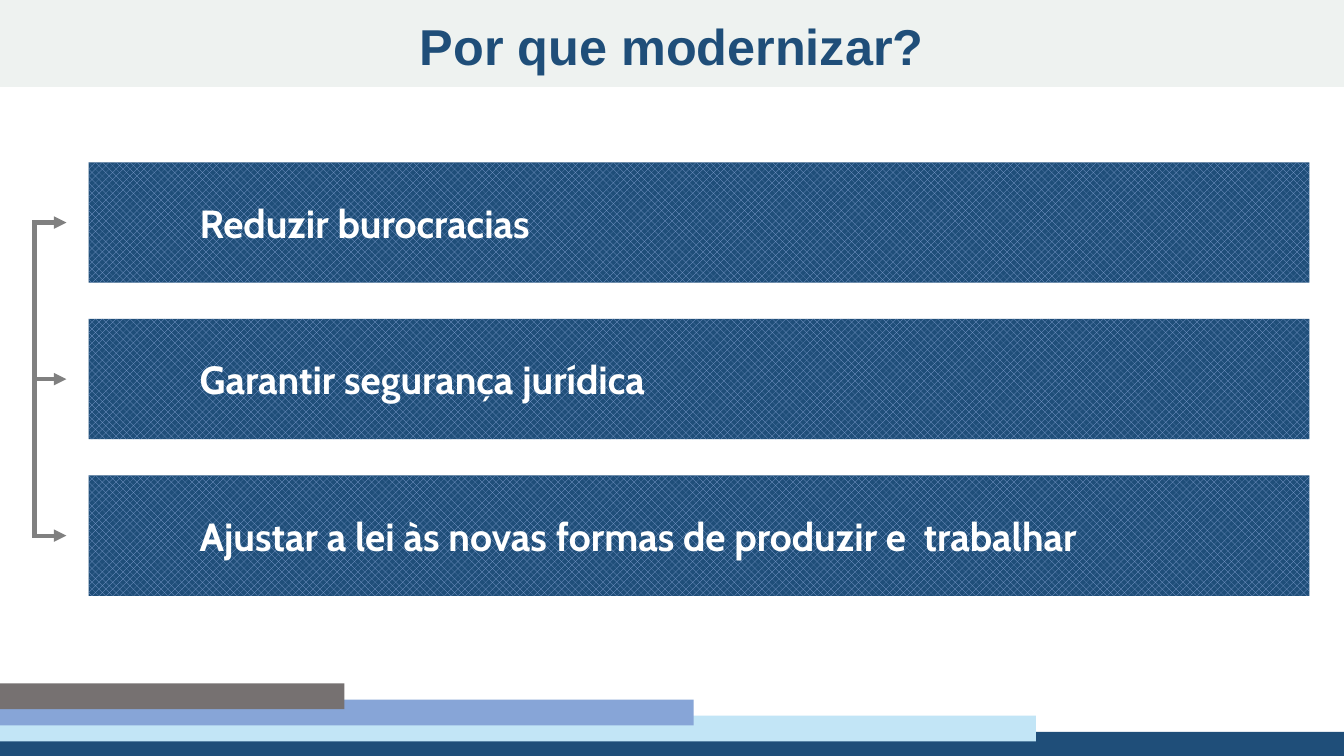
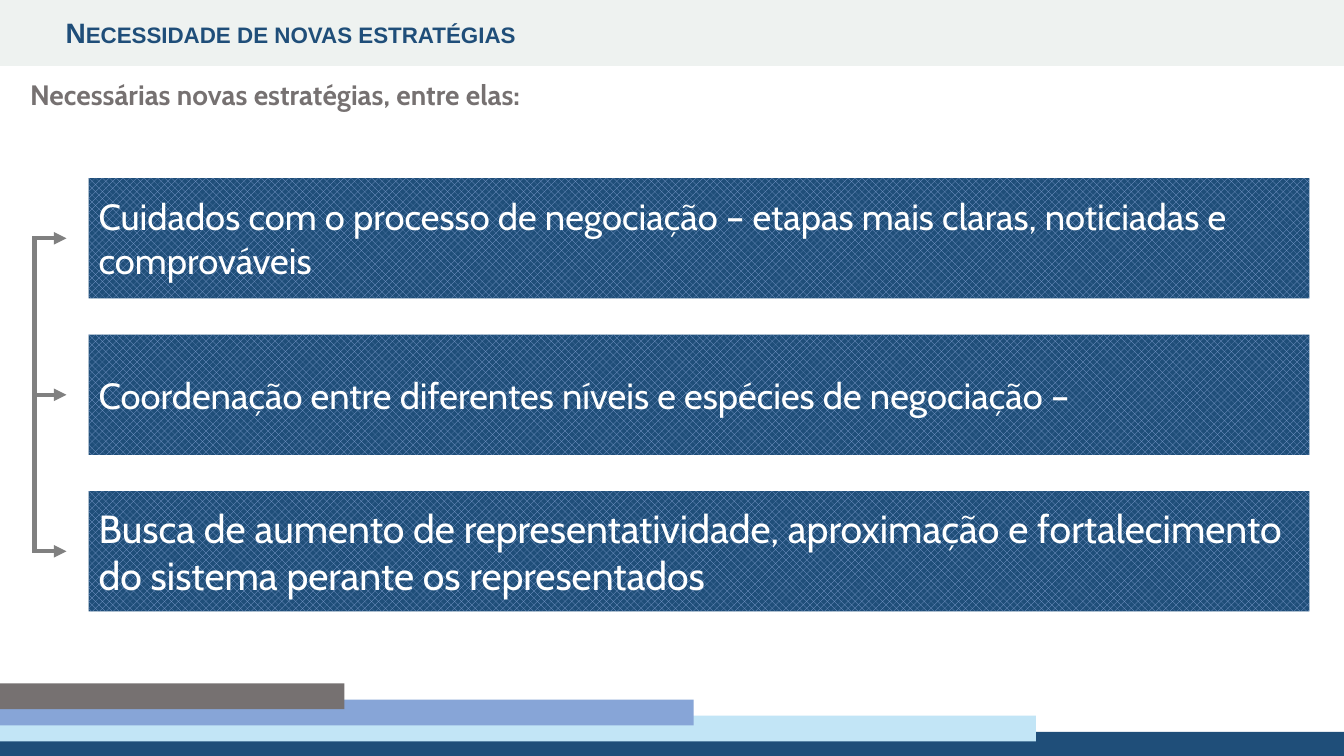
from dataclasses import dataclass

from lxml import etree
from pptx import Presentation
from pptx.dml.color import RGBColor
from pptx.enum.dml import MSO_PATTERN
from pptx.enum.shapes import MSO_CONNECTOR, MSO_SHAPE
from pptx.enum.text import MSO_ANCHOR, MSO_AUTO_SIZE, PP_ALIGN
from pptx.oxml.ns import qn
from pptx.util import Pt

RECTANGLE = MSO_SHAPE.RECTANGLE
STRAIGHT = MSO_CONNECTOR.STRAIGHT
HALF_TONE = MSO_PATTERN.PERCENT_50
TOP, MIDDLE = MSO_ANCHOR.TOP, MSO_ANCHOR.MIDDLE
LEFT, CENTER = PP_ALIGN.LEFT, PP_ALIGN.CENTER
NO_AUTOFIT = MSO_AUTO_SIZE.NONE


@dataclass(frozen=True)
class Theme:
    navy: RGBColor = RGBColor.from_string("1F4E79")
    blue: RGBColor = RGBColor.from_string("87A5D7")
    sky: RGBColor = RGBColor.from_string("C2E5F6")
    stone: RGBColor = RGBColor.from_string("767171")
    gray: RGBColor = RGBColor.from_string("808080")
    mist: RGBColor = RGBColor.from_string("EEF2F0")
    white: RGBColor = RGBColor.from_string("FFFFFF")
    title_font: str = "Arial"
    body_font: str = "Cabin"
    title_size: int = 36
    large_size: int = 28
    medium_size: int = 26
    small_size: int = 20


THEME = Theme()
SLIDE_W, SLIDE_H = 960, 540
ROW_LEFT, ROW_W, ROW_H, ROW_STEP = 63.4, 872, 86, 111.8
SPINE_X, ARROW_END = 24.6, 47.5
STEP_TOP, STEP_RISE, STEP_H = 488.2, 11.5, 18.4

# From front to back of the staircase: width and colour
FOOTER_STEPS = [
    (246, THEME.stone),
    (495.4, THEME.blue),
    (740, THEME.sky),
    (SLIDE_W, THEME.navy),
]

SLIDES = [
    {
        "title": "Por que modernizar?",
        "title_size": THEME.title_size,
        "title_align": CENTER,
        "small_caps": False,
        "band_height": 62,
        "lead": None,
        "rows_top": 116,
        "row_inset": 79.2,
        "bold": True,
        "rows": [
            ("Reduzir burocracias", THEME.large_size),
            ("Garantir segurança jurídica", THEME.large_size),
            ("Ajustar a lei às novas formas de produzir e  trabalhar", THEME.large_size),
        ],
    },
    {
        "title": "Necessidade de novas estratégias",
        "title_size": THEME.small_size,
        "title_align": LEFT,
        "small_caps": True,
        "band_height": 47,
        "lead": "Necessárias novas estratégias, entre elas:",
        "rows_top": 127.2,
        "row_inset": 7.2,
        "bold": False,
        "rows": [
            ("Cuidados com o processo de negociação – etapas mais claras, "
             "noticiadas e comprováveis", THEME.medium_size),
            ("Coordenação entre diferentes níveis e espécies de negociação –",
             THEME.medium_size),
            ("Busca de aumento de representatividade, aproximação e fortalecimento "
             "do sistema perante os representados", THEME.large_size),
        ],
    },
]


def write(frame, text, font, size, color, bold, align=LEFT):
    paragraph = frame.paragraphs[0]
    paragraph.alignment = align
    run = paragraph.add_run()
    run.text = text
    run.font.name = font
    run.font.size = Pt(size)
    run.font.bold = bold
    run.font.color.rgb = color
    return run


def add_rule(slide, x1, y1, x2, y2, arrow=False):
    rule = slide.shapes.add_connector(STRAIGHT, Pt(x1), Pt(y1), Pt(x2), Pt(y2))
    rule.line.color.rgb = THEME.gray
    rule.line.width = Pt(3)
    if arrow:
        stroke = rule.line._get_or_add_ln()
        etree.SubElement(stroke, qn("a:tailEnd"), type="triangle")
    etree.SubElement(rule._element.spPr, qn("a:effectLst"))


prs = Presentation()
prs.slide_width, prs.slide_height = Pt(SLIDE_W), Pt(SLIDE_H)
title_only = prs.slide_layouts[5]

for content in SLIDES:
    slide = prs.slides.add_slide(title_only)

    # The filled title placeholder is the header band
    title = slide.shapes.title
    title.left, title.top = Pt(0), Pt(0)
    title.width, title.height = Pt(SLIDE_W), Pt(content["band_height"])
    title.fill.solid()
    title.fill.fore_color.rgb = THEME.mist
    heading = title.text_frame
    heading.auto_size = NO_AUTOFIT
    heading.vertical_anchor = TOP
    heading.margin_left = heading.margin_right = Pt(46.8)
    heading.margin_top = Pt(10.8)
    heading_run = write(heading, content["title"], THEME.title_font,
                        content["title_size"], THEME.navy, True, content["title_align"])
    if content["small_caps"]:
        heading_run._r.get_or_add_rPr().set("cap", "small")

    if content["lead"]:
        lead = slide.shapes.add_textbox(Pt(14.4), Pt(51.8), Pt(939), Pt(31.7))
        lead.text_frame.word_wrap = True
        write(lead.text_frame, content["lead"], THEME.body_font,
              THEME.small_size, THEME.stone, True)

    for level, (width, color) in reversed(list(enumerate(FOOTER_STEPS))):
        top = STEP_TOP + level * STEP_RISE
        step = slide.shapes.add_shape(RECTANGLE, Pt(0), Pt(top), Pt(width),
                                      Pt(min(STEP_H, SLIDE_H - top)))
        step.shadow.inherit = False
        step.fill.solid()
        step.fill.fore_color.rgb = color
        step.line.fill.background()

    row_tops = [content["rows_top"] + i * ROW_STEP for i in range(len(content["rows"]))]
    for top, (text, size) in zip(row_tops, content["rows"]):
        row = slide.shapes.add_shape(RECTANGLE, Pt(ROW_LEFT), Pt(top),
                                     Pt(ROW_W), Pt(ROW_H))
        row.shadow.inherit = False
        row.fill.patterned()
        row.fill.pattern = HALF_TONE
        row.fill.fore_color.rgb = THEME.blue
        row.fill.back_color.rgb = THEME.navy
        row.line.fill.background()
        row.text_frame.word_wrap = True
        row.text_frame.vertical_anchor = MIDDLE
        row.text_frame.margin_left = Pt(content["row_inset"])
        write(row.text_frame, text, THEME.body_font, size, THEME.white, content["bold"])

    row_centers = [top + ROW_H / 2 for top in row_tops]
    add_rule(slide, SPINE_X, row_centers[0] - 1.5, SPINE_X, row_centers[-1] + 1.5)
    for center in row_centers:
        add_rule(slide, SPINE_X, center, ARROW_END, center, arrow=True)

prs.save("out.pptx")
